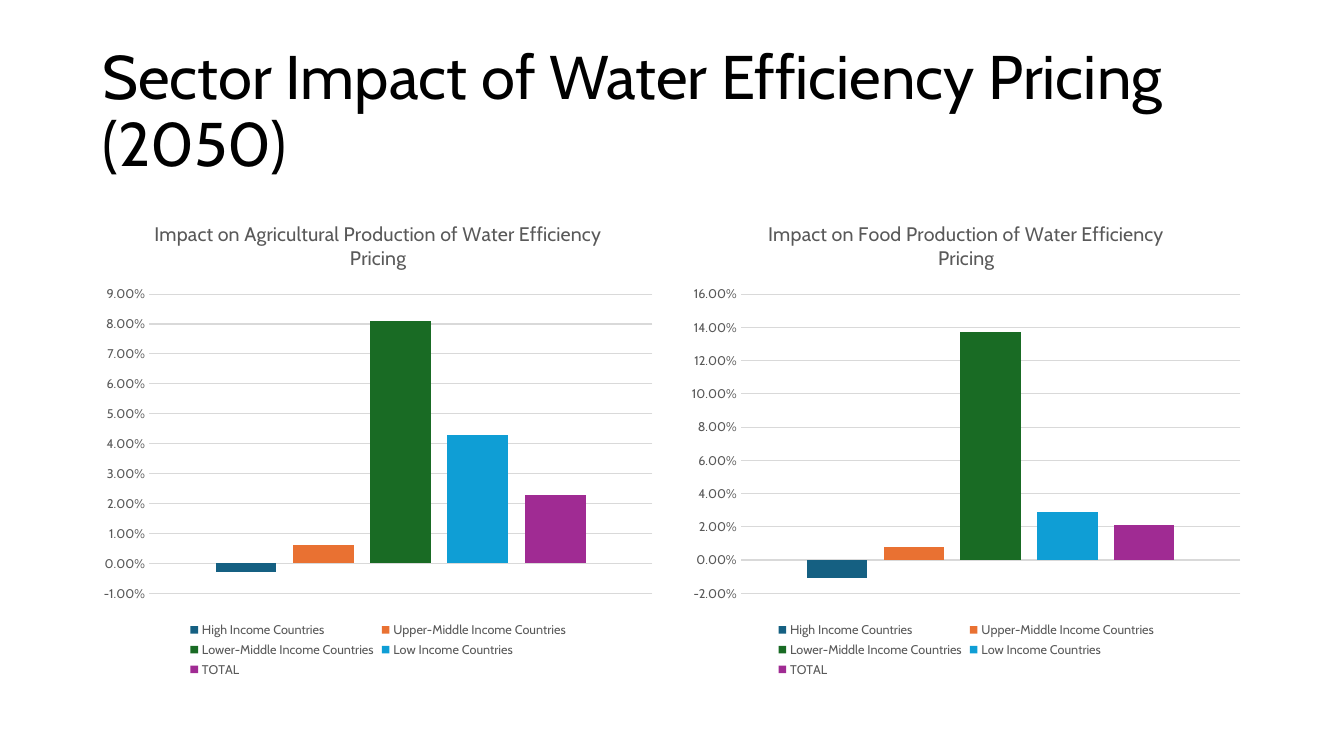
from pptx import Presentation
from pptx.chart.data import CategoryChartData
from pptx.dml.color import RGBColor
from pptx.enum.chart import XL_CHART_TYPE, XL_LEGEND_POSITION, XL_TICK_MARK
from pptx.enum.text import MSO_ANCHOR
from pptx.util import Cm, Pt

COLUMN = XL_CHART_TYPE.COLUMN_CLUSTERED
BOTTOM = XL_LEGEND_POSITION.BOTTOM
NO_TICK = XL_TICK_MARK.NONE
MIDDLE = MSO_ANCHOR.MIDDLE

FONT = "Cabin"
COLORS = {
    "ink": "000000",
    "gray": "595959",
    "grid": "D9D9D9",
    "High Income Countries": "156082",
    "Upper-Middle Income Countries": "E97132",
    "Lower-Middle Income Countries": "196B24",
    "Low Income Countries": "0F9ED5",
    "TOTAL": "A02B93",
}
GROUPS = list(COLORS)[3:]

LEFT = 2.33
WIDTH = 14.4
STEP = 14.82
CHARTS = [
    ("Impact on Agricultural Production of Water Efficiency Pricing",
     [-0.003, 0.006, 0.081, 0.043, 0.023], (-0.01, 0.09, 0.01)),
    ("Impact on Food Production of Water Efficiency Pricing",
     [-0.011, 0.008, 0.137, 0.029, 0.021], (-0.02, 0.16, 0.02)),
]


def color(name):
    return RGBColor.from_string(COLORS[name])


def set_font(font, size, tint):
    font.name = FONT
    font.size = Pt(size)
    font.bold = False
    font.color.rgb = color(tint)


def add_text(frame, text, size=14, tint="gray", space=None):
    para = frame.paragraphs[0]
    para.line_spacing = space
    run = para.add_run()
    run.text = text
    set_font(run.font, size, tint)


def add_title(slide, text):
    box = slide.shapes.add_textbox(Cm(LEFT), Cm(1.01), Cm(29.21), Cm(3.68))
    frame = box.text_frame
    frame.word_wrap = True
    frame.vertical_anchor = MIDDLE
    add_text(frame, text, size=44, tint="ink", space=0.9)


def style_axes(chart, scale):
    chart.category_axis.visible = False
    axis = chart.value_axis
    axis.minimum_scale, axis.maximum_scale, axis.major_unit = scale
    axis.major_tick_mark = axis.minor_tick_mark = NO_TICK
    axis.format.line.fill.background()
    grid = axis.major_gridlines.format.line
    grid.color.rgb = color("grid")
    grid.width = Pt(0.75)
    labels = axis.tick_labels
    labels.number_format = "0.00%"
    labels.number_format_is_linked = False
    set_font(labels.font, 9, "gray")


def add_bars(slide, left, title, values, scale):
    data = CategoryChartData(number_format="0.00%")
    data.categories = ["1"]
    for name, value in zip(GROUPS, values):
        data.add_series(name, [value])
    chart = slide.shapes.add_chart(
        COLUMN, Cm(left), Cm(5.08), Cm(WIDTH), Cm(12.09), data).chart
    set_font(chart.font, 10, "ink")
    chart.has_title = True
    add_text(chart.chart_title.text_frame, title)
    chart.chart_title.include_in_layout = False
    chart.has_legend = True
    chart.legend.position = BOTTOM
    chart.legend.include_in_layout = False
    set_font(chart.legend.font, 9, "gray")
    style_axes(chart, scale)
    plot = chart.plots[0]
    plot.vary_by_categories = False
    plot.gap_width = 219
    plot.overlap = -27
    for bar in plot.series:
        bar.invert_if_negative = False
        bar.format.fill.solid()
        bar.format.fill.fore_color.rgb = color(bar.name)


def main():
    deck = Presentation()
    deck.slide_width = Cm(33.87)
    deck.slide_height = Cm(19.05)
    slide = deck.slides.add_slide(deck.slide_layouts[6])
    add_title(slide, "Sector Impact of Water Efficiency Pricing (2050)")
    for i, (title, values, scale) in enumerate(CHARTS):
        add_bars(slide, LEFT + i * STEP, title, values, scale)
    deck.save("out.pptx")


if __name__ == "__main__":
    main()
